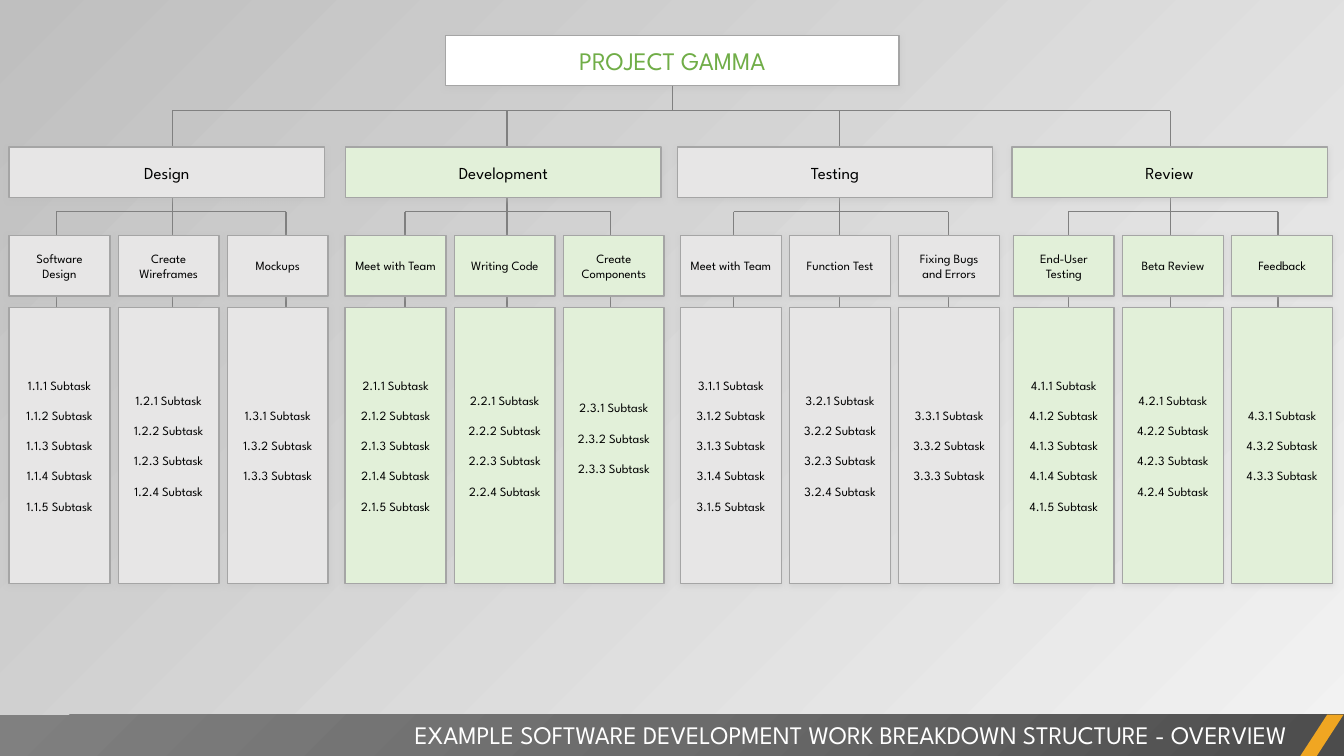
from lxml import etree
from pptx import Presentation
from pptx.dml.color import RGBColor
from pptx.enum.shapes import MSO_CONNECTOR, MSO_SHAPE
from pptx.enum.text import MSO_ANCHOR, MSO_AUTO_SIZE, PP_ALIGN
from pptx.oxml import parse_xml
from pptx.oxml.ns import qn
from pptx.util import Cm, Pt

RECTANGLE, PARALLELOGRAM = MSO_SHAPE.RECTANGLE, MSO_SHAPE.PARALLELOGRAM
STRAIGHT = MSO_CONNECTOR.STRAIGHT
CENTER, RIGHT = PP_ALIGN.CENTER, PP_ALIGN.RIGHT
MIDDLE, NO_AUTOFIT = MSO_ANCHOR.MIDDLE, MSO_AUTO_SIZE.NONE
BOTTOM_SIDE = 2

# Content
TITLE = "EXAMPLE SOFTWARE DEVELOPMENT WORK BREAKDOWN STRUCTURE - OVERVIEW"
PROJECT = "PROJECT GAMMA"
GRAY, GREEN = "E7E6E6", "E2F0D9"
# name, fill, left of phase box, left of task columns, line positions, tasks
PHASES = [
    ("Design", GRAY, 0.23, 0.23, (1.42, 4.34, 7.21),
     ["Software Design", "Create Wireframes", "Mockups"]),
    ("Development", GREEN, 8.71, 8.7, (10.21, 12.78, 15.39),
     ["Meet with Team", "Writing Code", "Create Components"]),
    ("Testing", GRAY, 17.07, 17.15, (18.49, 21.16, 23.9),
     ["Meet with Team", "Function Test", "Fixing Bugs and Errors"]),
    ("Review", GREEN, 25.5, 25.54, (26.92, 29.49, 32.21),
     ["End-User Testing", "Beta Review", "Feedback"]),
]
SUBTASK_COUNTS = (5, 4, 3)
RAISED_LIST = "Create Components"

# Layout in centimetres
SLIDE_WIDTH, SLIDE_HEIGHT = 33.87, 19.05
PHASE_TOP, PHASE_WIDTH, PHASE_HEIGHT = 3.71, 7.95, 1.27
TASK_TOP, TASK_WIDTH, TASK_HEIGHT, TASK_PITCH = 5.94, 2.54, 1.52, 2.75
LIST_TOP, LIST_HEIGHT = 7.75, 6.96
PHASE_BUS, TASK_BUS, LINE_END = 2.79, 5.33, 8.46
FOOTER_TOP = 18.01

FONT = "League Spartan"
LIST_GAP = Pt(10.8)
DRAWING_NS = "http://schemas.openxmlformats.org/drawingml/2006/main"
SHADOW = f"""<a:outerShdw xmlns:a="{DRAWING_NS}" blurRad="50800" dist="12700"
  dir="5400000" algn="t" rotWithShape="0">
  <a:srgbClr val="BFBFBF"><a:alpha val="40000"/></a:srgbClr></a:outerShdw>"""
FOOTER_GRADIENT = f"""<a:gradFill xmlns:a="{DRAWING_NS}" rotWithShape="1"><a:gsLst>
  <a:gs pos="0"><a:srgbClr val="4C4C4C"/></a:gs>
  <a:gs pos="50000"><a:srgbClr val="6B6B6B"/></a:gs>
  <a:gs pos="100000"><a:srgbClr val="808080"/></a:gs></a:gsLst>
  <a:path path="circle"><a:fillToRect l="100000" t="100000"/></a:path></a:gradFill>"""


def color(value):
    return RGBColor.from_string(value)


def write(text_frame, lines, size, text_color, align=CENTER):
    text_frame.word_wrap = True
    text_frame.vertical_anchor = MIDDLE
    for index, line in enumerate(lines):
        paragraph = text_frame.add_paragraph() if index else text_frame.paragraphs[0]
        paragraph.alignment = align
        if index:
            paragraph.space_before = LIST_GAP
        run = paragraph.add_run()
        run.text = line
        run.font.name = FONT
        run.font.size = Pt(size)
        run.font.color.rgb = color(text_color)


def add_plain_shape(slide, kind, left, top, width, height, fill):
    shape = slide.shapes.add_shape(kind, Cm(left), Cm(top), Cm(width), Cm(height))
    shape.shadow.inherit = False
    shape.fill.solid()
    shape.fill.fore_color.rgb = color(fill)
    shape.line.fill.background()
    return shape


def add_box(slide, left, top, width, height, fill, lines, size, text_color="000000"):
    box = add_plain_shape(slide, RECTANGLE, left, top, width, height, fill)
    box.line.color.rgb = color("A5A5A5")
    box.line.width = Pt(1)
    box.element.spPr.find(qn("a:effectLst")).append(parse_xml(SHADOW))
    write(box.text_frame, lines, size, text_color)
    return box


def add_line(slide, x1, y1, x2, y2):
    line = slide.shapes.add_connector(STRAIGHT, Cm(x1), Cm(y1), Cm(x2), Cm(y2))
    line.line.color.rgb = color("808080")
    line.line.width = Pt(1)
    etree.SubElement(line.element.spPr, qn("a:effectLst"))
    return line


def add_lines(slide):
    trunks = [lines[1] for _, _, _, _, lines, _ in PHASES]
    add_line(slide, trunks[0], PHASE_BUS, trunks[-1], PHASE_BUS)
    for _, _, _, _, (first, trunk, last), _ in PHASES:
        add_line(slide, trunk, PHASE_BUS, trunk, LINE_END)
        add_line(slide, first, TASK_BUS, last, TASK_BUS)
        for x in (first, last):
            add_line(slide, x, TASK_BUS, x, LINE_END)


def add_phase(slide, number, name, fill, phase_left, tasks_left, tasks):
    add_box(slide, phase_left, PHASE_TOP, PHASE_WIDTH, PHASE_HEIGHT, fill, [name], 12)
    for column, (task, count) in enumerate(zip(tasks, SUBTASK_COUNTS)):
        left = tasks_left + column * TASK_PITCH
        subtasks = [f"{number}.{column + 1}.{item} Subtask" for item in range(1, count + 1)]
        add_box(slide, left, TASK_TOP, TASK_WIDTH, TASK_HEIGHT, fill, [task], 9)
        task_list = add_box(slide, left, LIST_TOP, TASK_WIDTH, LIST_HEIGHT, fill, subtasks, 9)
        if task == RAISED_LIST:
            task_list.text_frame.margin_bottom += LIST_GAP


def add_footer(slide):
    height = SLIDE_HEIGHT - FOOTER_TOP
    bar = add_plain_shape(slide, RECTANGLE, 0, FOOTER_TOP, SLIDE_WIDTH, height, "808080")
    properties = bar.element.spPr
    properties.replace(properties.find(qn("a:solidFill")), parse_xml(FOOTER_GRADIENT))
    accent = add_plain_shape(slide, PARALLELOGRAM, 32.77, FOOTER_TOP, 1.09, height, "F0A622")
    accent.adjustments[0] = 0.65

    # The title lies on top of the bar
    title = slide.shapes.title
    title.left, title.top, title.width, title.height = Cm(0), Cm(17.98), Cm(32.69), Cm(1.03)
    title.text_frame.auto_size = NO_AUTOFIT
    write(title.text_frame, [TITLE], 18, "FFFFFF", RIGHT)
    title.element.getparent().append(title.element)


def main():
    presentation = Presentation()
    presentation.slide_width, presentation.slide_height = Cm(SLIDE_WIDTH), Cm(SLIDE_HEIGHT)
    slide = presentation.slides.add_slide(presentation.slide_layouts[5])

    # Background
    background = slide.background.fill
    background.gradient()
    background.gradient_angle = 135
    for stop, position, value in zip(background.gradient_stops, (0, 1), ("F2F2F2", "BFBFBF")):
        stop.position = position
        stop.color.rgb = color(value)

    # Project box and tree lines
    project = add_box(slide, 11.23, 0.89, 11.43, 1.27, "FFFFFF", [PROJECT], 18, "70AD47")
    center = 11.23 + 11.43 / 2
    stem = add_line(slide, center, 2.16, center, PHASE_BUS)
    stem.begin_connect(project, BOTTOM_SIDE)
    add_lines(slide)

    # Phases with their tasks
    for number, (name, fill, phase_left, tasks_left, _, tasks) in enumerate(PHASES, 1):
        add_phase(slide, number, name, fill, phase_left, tasks_left, tasks)

    add_footer(slide)
    presentation.save("out.pptx")


if __name__ == "__main__":
    main()
